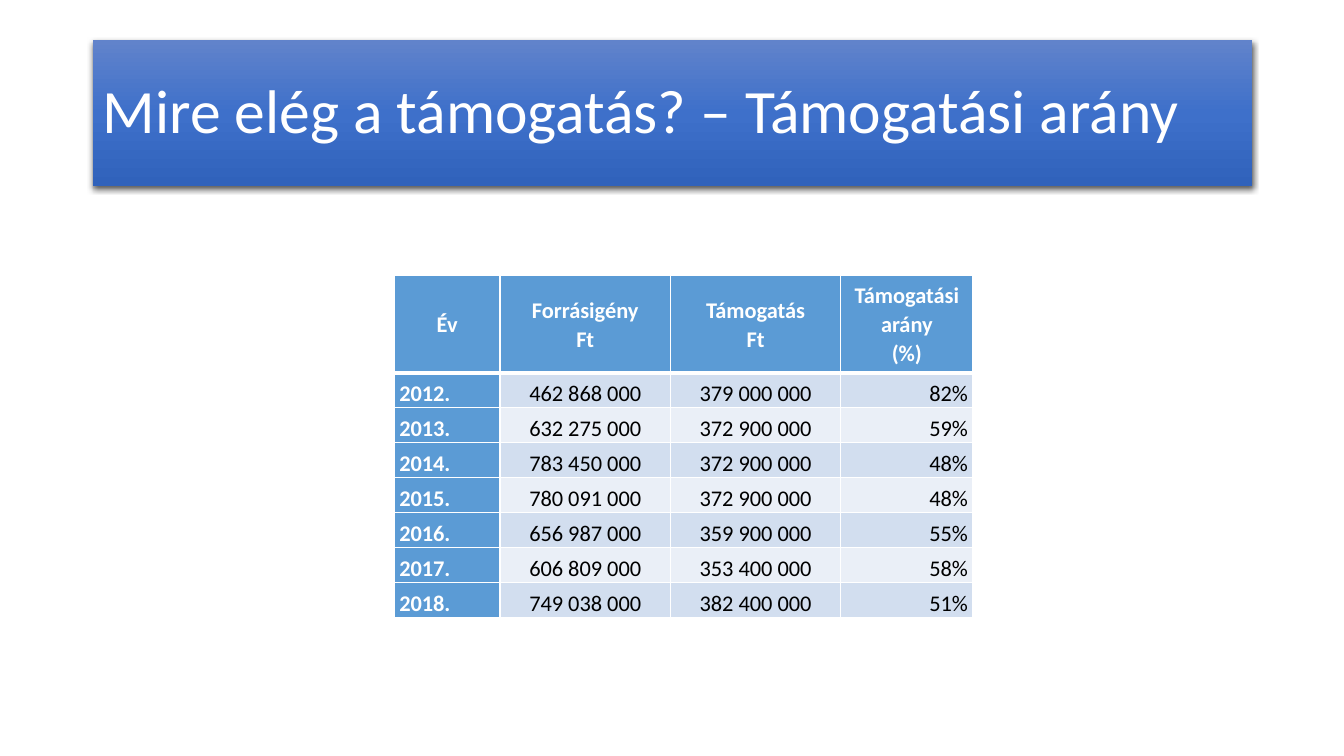
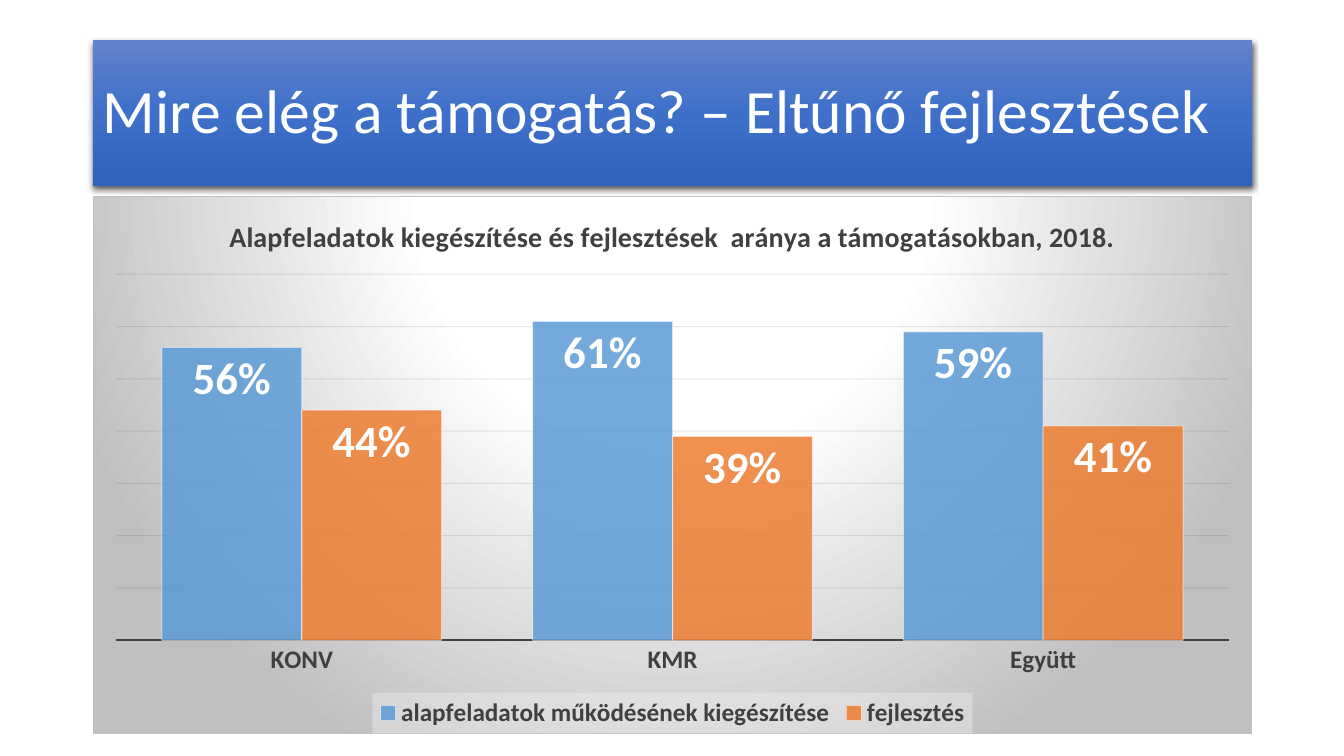
from dataclasses import dataclass

from pptx import Presentation
from pptx.chart.data import CategoryChartData
from pptx.dml.color import RGBColor
from pptx.enum.chart import XL_CHART_TYPE, XL_LABEL_POSITION, XL_LEGEND_POSITION, XL_TICK_MARK
from pptx.enum.text import MSO_ANCHOR, PP_ALIGN
from pptx.oxml import parse_xml
from pptx.oxml.ns import nsdecls
from pptx.util import Inches, Pt


@dataclass(frozen=True)
class Theme:
    font: str = "Calibri"
    white: RGBColor = RGBColor(0xFF, 0xFF, 0xFF)
    black: RGBColor = RGBColor(0x00, 0x00, 0x00)
    dark_gray: RGBColor = RGBColor(0x40, 0x40, 0x40)
    grid: RGBColor = RGBColor(0x0D, 0x0D, 0x0D)
    blue: RGBColor = RGBColor(0x5B, 0x9B, 0xD5)
    orange: RGBColor = RGBColor(0xED, 0x7D, 0x31)
    bands: tuple = (RGBColor(0xD2, 0xDE, 0xEF), RGBColor(0xEA, 0xEF, 0xF7))
    title_size: Pt = Pt(44)
    table_size: Pt = Pt(16)
    chart_title_size: Pt = Pt(20)
    chart_size: Pt = Pt(18)
    label_size: Pt = Pt(32)


theme = Theme()
left_margin, content_width = Inches(0.92), Inches(11.5)

TITLE_GRADIENT = f"""<a:gradFill {nsdecls("a")} rotWithShape="1"><a:gsLst>
<a:gs pos="0"><a:srgbClr val="6183CB"/></a:gs>
<a:gs pos="50000"><a:srgbClr val="3E70CA"/></a:gs>
<a:gs pos="100000"><a:srgbClr val="3062BB"/></a:gs>
</a:gsLst><a:lin ang="5400000" scaled="0"/></a:gradFill>"""

TITLE_SHADOW = f"""<a:effectLst {nsdecls("a")}>
<a:outerShdw blurRad="57150" dist="19050" dir="5400000" algn="ctr" rotWithShape="0">
<a:srgbClr val="000000"><a:alpha val="63000"/></a:srgbClr></a:outerShdw></a:effectLst>"""

CHART_BACKGROUND = f"""<c:spPr {nsdecls("c", "a")}><a:gradFill><a:gsLst>
<a:gs pos="0"><a:srgbClr val="FFFFFF"/></a:gs>
<a:gs pos="39000"><a:srgbClr val="FFFFFF"/></a:gs>
<a:gs pos="100000"><a:srgbClr val="BFBFBF"/></a:gs></a:gsLst>
<a:path path="circle"><a:fillToRect l="50000" t="-80000" r="50000" b="180000"/></a:path>
</a:gradFill><a:ln w="9525"><a:solidFill><a:srgbClr val="BFBFBF"/></a:solidFill></a:ln></c:spPr>"""

LEGEND_BACKGROUND = f"""<c:spPr {nsdecls("c", "a")}><a:solidFill><a:srgbClr val="F2F2F2">
<a:alpha val="39000"/></a:srgbClr></a:solidFill><a:ln><a:noFill/></a:ln></c:spPr>"""

presentation = Presentation()
presentation.slide_width, presentation.slide_height = Inches(13.33), Inches(7.5)


def style_font(font, size, color, bold=False):
    font.name, font.size, font.bold = theme.font, size, bold
    font.color.rgb = color


def add_titled_slide(text):
    slide = presentation.slides.add_slide(presentation.slide_layouts[5])
    title = slide.shapes.title
    title.left, title.top = left_margin, Inches(0.4)
    title.width, title.height = content_width, Inches(1.45)
    properties = title._element.spPr
    properties.append(parse_xml(TITLE_GRADIENT))
    properties.append(parse_xml(TITLE_SHADOW))
    title.text_frame.text = text
    title.text_frame.vertical_anchor = MSO_ANCHOR.MIDDLE
    paragraph = title.text_frame.paragraphs[0]
    paragraph.alignment = PP_ALIGN.LEFT
    paragraph.line_spacing = 0.9
    style_font(paragraph.font, theme.title_size, theme.white)
    return slide


# Slide 1: support ratio table
slide = add_titled_slide("Mire elég a támogatás? – Támogatási arány")
rows = [
    ("Év", "Forrásigény\nFt", "Támogatás\nFt", "Támogatási arány\n(%)"),
    ("2012.", "462 868 000", "379 000 000", "82%"),
    ("2013.", "632 275 000", "372 900 000", "59%"),
    ("2014.", "783 450 000", "372 900 000", "48%"),
    ("2015.", "780 091 000", "372 900 000", "48%"),
    ("2016.", "656 987 000", "359 900 000", "55%"),
    ("2017.", "606 809 000", "353 400 000", "58%"),
    ("2018.", "749 038 000", "382 400 000", "51%"),
]
column_widths = (1.05, 1.69, 1.69, 1.31)
column_alignments = (PP_ALIGN.LEFT, PP_ALIGN.CENTER, PP_ALIGN.CENTER, PP_ALIGN.RIGHT)
table_height, header_height = Inches(3.4), Inches(0.97)
table = slide.shapes.add_table(
    len(rows), len(column_widths), Inches(3.91), Inches(2.73), Inches(sum(column_widths)), table_height
).table
for column, width in zip(table.columns, column_widths):
    column.width = Inches(width)

for row_index, values in enumerate(rows):
    is_header = row_index == 0
    body_height = (table_height - header_height) // (len(rows) - 1)
    table.rows[row_index].height = header_height if is_header else body_height
    for column_index, value in enumerate(values):
        is_heading = is_header or column_index == 0
        cell = table.cell(row_index, column_index)
        cell.text = value
        cell.margin_left = cell.margin_right = Inches(0.05)
        cell.margin_top = cell.margin_bottom = 0
        cell.vertical_anchor = MSO_ANCHOR.MIDDLE if is_header else MSO_ANCHOR.BOTTOM
        for paragraph in cell.text_frame.paragraphs:
            paragraph.alignment = PP_ALIGN.CENTER if is_header else column_alignments[column_index]
            paragraph.line_spacing = 1.07
            style_font(paragraph.font, theme.table_size, theme.white if is_heading else theme.black, is_heading)

        # White borders, thicker between header and body
        thick_side = {0: "B", 1: "T"}.get(row_index)
        for side in "LRTB":
            line_width = Pt(3) if side == thick_side else Pt(1)
            cell._tc.get_or_add_tcPr().append(parse_xml(
                f'<a:ln{side} {nsdecls("a")} w="{line_width}"><a:solidFill>'
                f'<a:srgbClr val="{theme.white}"/></a:solidFill></a:ln{side}>'
            ))
        cell.fill.solid()
        cell.fill.fore_color.rgb = theme.blue if is_heading else theme.bands[(row_index - 1) % 2]

# Slide 2: basic tasks against developments
slide = add_titled_slide("Mire elég a támogatás? – Eltűnő fejlesztések")
chart_data = CategoryChartData(number_format="0%")
chart_data.categories = ["KONV", "KMR", "Együtt"]
chart_data.add_series("alapfeladatok működésének kiegészítése", (0.56, 0.61, 0.59))
chart_data.add_series("fejlesztés", (0.44, 0.39, 0.41))
chart = slide.shapes.add_chart(
    XL_CHART_TYPE.COLUMN_CLUSTERED, left_margin, Inches(1.94), content_width, Inches(5.34), chart_data
).chart
style_font(chart.font, Pt(10), theme.black)
chart._chartSpace.txPr.addprevious(parse_xml(CHART_BACKGROUND))

# Chart title and legend
chart.has_title = True
chart.chart_title.include_in_layout = False
chart.chart_title.text_frame.text = "Alapfeladatok kiegészítése és fejlesztések  aránya a támogatásokban, 2018."
style_font(chart.chart_title.text_frame.paragraphs[0].font, theme.chart_title_size, theme.dark_gray, True)
chart.has_legend = True
legend = chart.legend
legend.position = XL_LEGEND_POSITION.BOTTOM
legend.include_in_layout = False
style_font(legend.font, theme.chart_size, theme.dark_gray, True)
legend._element.txPr.addprevious(parse_xml(LEGEND_BACKGROUND))

# Axes
category_axis, value_axis = chart.category_axis, chart.value_axis
category_axis.major_tick_mark = XL_TICK_MARK.NONE
style_font(category_axis.tick_labels.font, theme.chart_size, theme.dark_gray, True)
category_axis.format.line.color.rgb = theme.dark_gray
category_axis.format.line.width = Pt(1.5)
value_axis.visible = False
value_axis.minimum_scale, value_axis.maximum_scale, value_axis.major_unit = 0, 0.7, 0.1
grid_line = value_axis.major_gridlines.format.line
grid_line.color.rgb = theme.grid
grid_line.width = Pt(0.75)

# Columns and their labels
plot = chart.plots[0]
plot.gap_width, plot.overlap = 65, 0
plot.vary_by_categories = False
for series, color in zip(plot.series, (theme.blue, theme.orange)):
    series.format.fill.solid()
    series.format.fill.fore_color.rgb = color
    series.format.line.color.rgb = theme.white
    series.format.line.width = Pt(0.75)
    labels = series.data_labels
    labels.show_value = True
    labels.number_format, labels.number_format_is_linked = "0%", False
    labels.position = XL_LABEL_POSITION.INSIDE_END
    style_font(labels.font, theme.label_size, theme.white, True)

# Opacity of columns, column outlines and grid lines, in percent
opacities = {
    "c:ser/c:spPr/a:solidFill": 85,
    "c:ser/c:spPr/a:ln/a:solidFill": 50,
    "c:majorGridlines/c:spPr/a:ln/a:solidFill": 10,
}
for query, percent in opacities.items():
    for color_element in chart._chartSpace.xpath(f".//{query}/a:srgbClr"):
        color_element.append(parse_xml(f'<a:alpha {nsdecls("a")} val="{percent * 1000}"/>'))

presentation.save("out.pptx")
